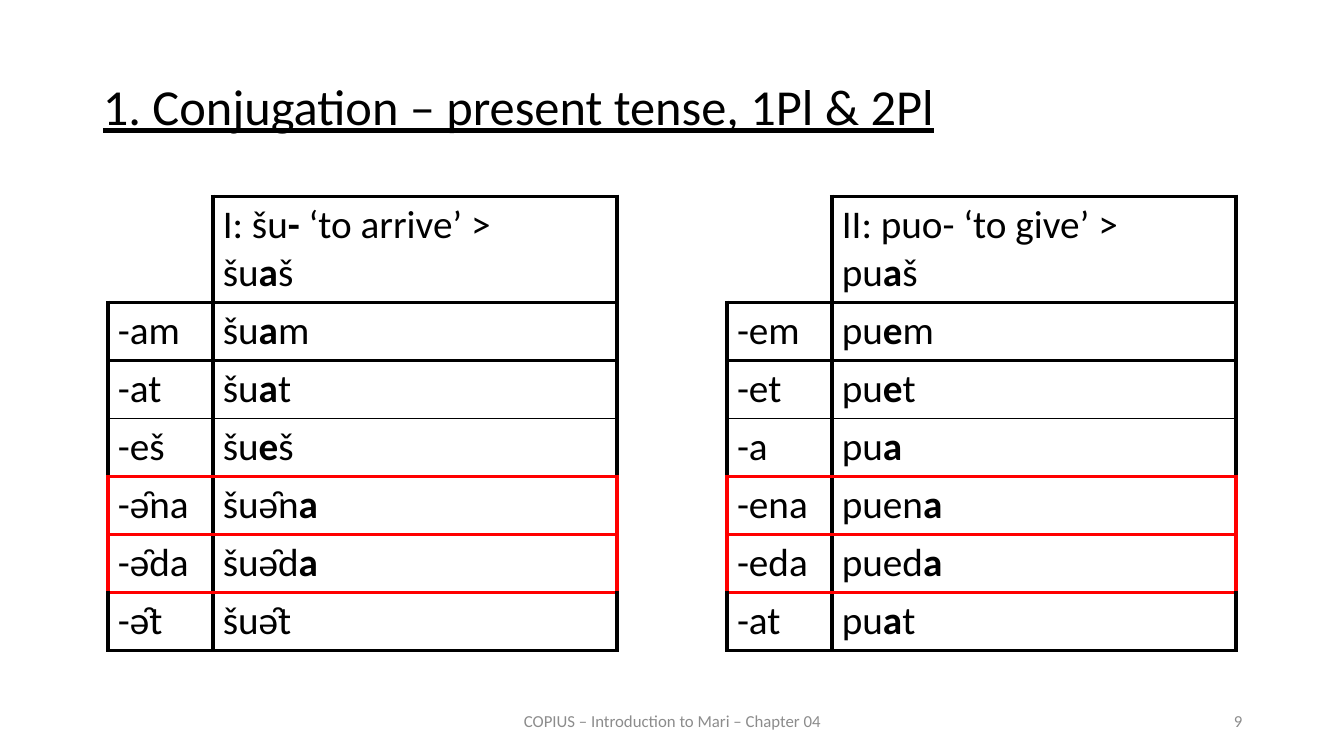
from lxml.etree import SubElement
from pptx import Presentation
from pptx.dml.color import RGBColor
from pptx.enum.text import MSO_ANCHOR, MSO_AUTO_SIZE, PP_ALIGN
from pptx.oxml.ns import qn
from pptx.util import Inches, Pt

BLACK = RGBColor(0x00, 0x00, 0x00)
RED = RGBColor(0xFF, 0x00, 0x00)
GRAY = RGBColor(0x8C, 0x8C, 0x8C)

THICK, THIN, RED_LINE = (BLACK, 3), (BLACK, 1), (RED, 3)

# Lines above each row, and the one below the last row
ROW_LINES = [THICK, THICK, THICK, THIN, RED_LINE, RED_LINE, RED_LINE, THICK]
NEW_ROWS = (4, 5)  # 1Pl and 2Pl, framed in red

# Asterisks enclose bold letters
FIRST_CONJUGATION = [
    ("", "I: šu*-* ‘to arrive’ >\nšu*a*š"),
    ("-am", "šu*a*m"),
    ("-at", "šu*a*t"),
    ("-eš", "šu*e*š"),
    ("-ə̑na", "šuə̑n*a*"),
    ("-ə̑da", "šuə̑d*a*"),
    ("-ə̑t", "šuə̑t"),
]
SECOND_CONJUGATION = [
    ("", "II: puo- ‘to give’ >\npu*a*š"),
    ("-em", "pu*e*m"),
    ("-et", "pu*e*t"),
    ("-a", "pu*a*"),
    ("-ena", "puen*a*"),
    ("-eda", "pued*a*"),
    ("-at", "pu*a*t"),
]


class SlideBuilder:
    font_name = "Calibri"

    def __init__(self, slide):
        self.slide = slide

    def add_run(self, paragraph, text, size, color=BLACK, bold=False, underline=False):
        run = paragraph.add_run()
        run.text = text
        run.font.name = self.font_name
        run.font.size = Pt(size)
        run.font.color.rgb = color
        run.font.bold = bold
        run.font.underline = underline

    def add_title(self, text):
        title = self.slide.shapes.title
        title.left, title.top = Inches(0.92), Inches(0.76)
        title.width, title.height = Inches(11.5), Inches(0.8)
        frame = title.text_frame
        frame.auto_size = MSO_AUTO_SIZE.NONE
        frame.vertical_anchor = MSO_ANCHOR.TOP
        paragraph = frame.paragraphs[0]
        paragraph.alignment = PP_ALIGN.JUSTIFY
        paragraph.line_spacing = 0.9
        self.add_run(paragraph, text, 36, underline=True)

    def add_footer(self, text, left, width, alignment):
        box = self.slide.shapes.add_textbox(
            Inches(left), Inches(6.95), Inches(width), Inches(0.4))
        frame = box.text_frame
        frame.word_wrap = True
        frame.vertical_anchor = MSO_ANCHOR.MIDDLE
        paragraph = frame.paragraphs[0]
        paragraph.alignment = alignment
        self.add_run(paragraph, text, 12, GRAY)

    def fill_cell(self, cell, text):
        cell.fill.background()
        for index, line in enumerate(text.split("\n")):
            frame = cell.text_frame
            paragraph = frame.add_paragraph() if index else frame.paragraphs[0]
            for part, letters in enumerate(line.split("*")):
                if letters:
                    self.add_run(paragraph, letters, 28, bold=part % 2 == 1)

    def set_borders(self, cell, left, right, top, bottom):
        properties = cell._tc.get_or_add_tcPr()
        sides = {"a:lnL": left, "a:lnR": right, "a:lnT": top, "a:lnB": bottom}
        for position, (tag, border) in enumerate(sides.items()):
            line = SubElement(properties, qn(tag))
            properties.insert(position, line)
            if border is None:
                SubElement(line, qn("a:noFill"))
                continue
            color, width = border
            line.set("w", str(Pt(width)))
            fill = SubElement(line, qn("a:solidFill"))
            SubElement(fill, qn("a:srgbClr")).set("val", str(color))

    def add_conjugation(self, rows, left):
        frame = self.slide.shapes.add_table(
            len(rows), 2, Inches(left), Inches(1.95), Inches(5.05), Inches(4.5))
        table = frame.table
        table.first_row = table.horz_banding = False
        for column, width in zip(table.columns, (1.04, 4.01)):
            column.width = Inches(width)
        for index, (ending, form) in enumerate(rows):
            table.rows[index].height = Inches(0.57 if index else 1.05)
            ending_cell, form_cell = table.cell(index, 0), table.cell(index, 1)
            self.fill_cell(ending_cell, ending)
            self.fill_cell(form_cell, form)
            outer = RED_LINE if index in NEW_ROWS else THICK
            top, bottom = ROW_LINES[index:index + 2]
            # The corner cell is open at the left and the top
            self.set_borders(ending_cell, outer if index else None, THICK,
                             top if index else None, bottom)
            self.set_borders(form_cell, THICK, outer, top, bottom)


def main():
    presentation = Presentation()
    presentation.slide_width = Inches(13.33)
    presentation.slide_height = Inches(7.5)
    builder = SlideBuilder(presentation.slides.add_slide(presentation.slide_layouts[5]))

    # Heading
    builder.add_title("1. Conjugation – present tense, 1Pl & 2Pl")

    # The two conjugations side by side
    builder.add_conjugation(FIRST_CONJUGATION, 1.07)
    builder.add_conjugation(SECOND_CONJUGATION, 7.21)

    # Footer and slide number
    builder.add_footer("COPIUS – Introduction to Mari – Chapter 04", 4.42, 4.5, PP_ALIGN.CENTER)
    builder.add_footer("9", 9.42, 3, PP_ALIGN.RIGHT)

    presentation.save("out.pptx")


if __name__ == "__main__":
    main()
